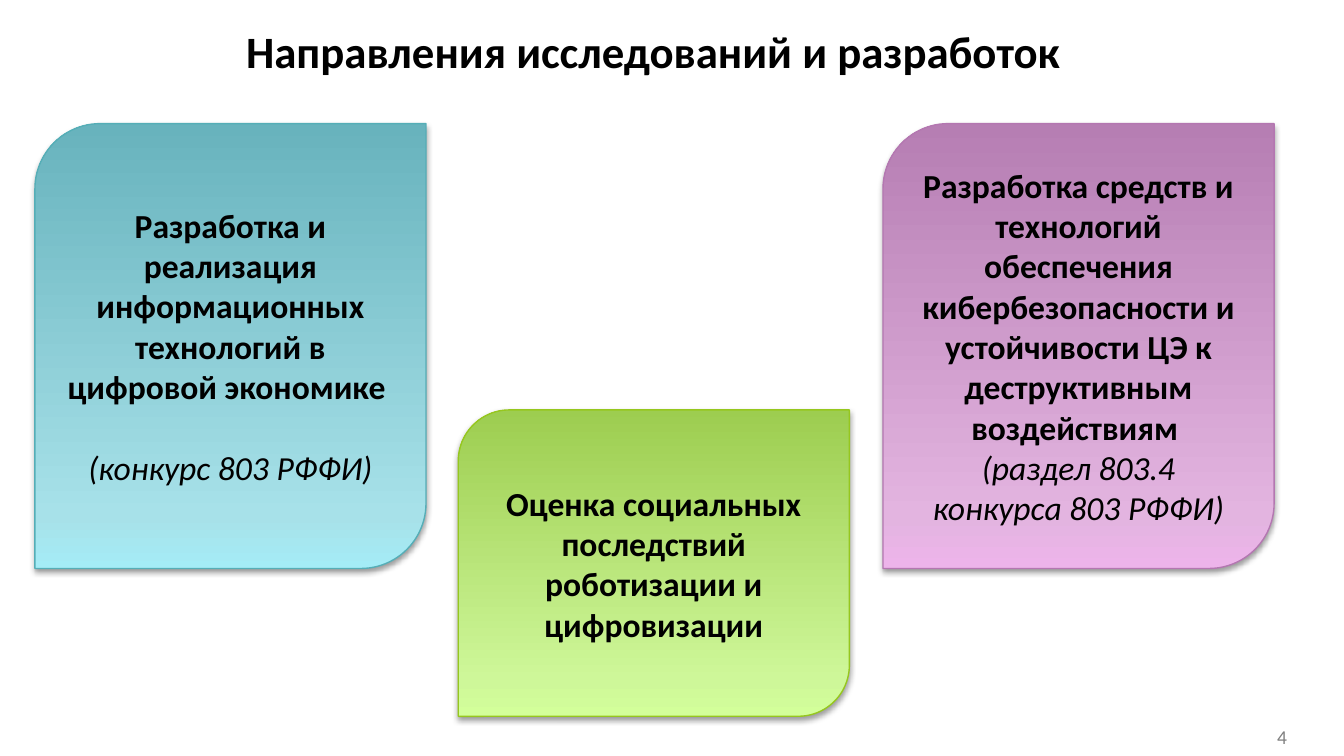
from copy import deepcopy
from dataclasses import dataclass

from lxml import etree
from pptx import Presentation
from pptx.dml.color import RGBColor
from pptx.enum.shapes import MSO_SHAPE
from pptx.enum.text import MSO_ANCHOR, PP_ALIGN
from pptx.oxml.ns import qn
from pptx.util import Inches, Pt

CENTER = PP_ALIGN.CENTER
MIDDLE = MSO_ANCHOR.MIDDLE
LEAF = MSO_SHAPE.ROUND_2_DIAG_RECTANGLE


@dataclass(frozen=True)
class Theme:
    font: str = "Calibri"
    text: str = "000000"
    muted: str = "808080"
    title_size: float = 24
    body_size: float = 18
    number_size: float = 10.5
    # Each palette: outline, then gradient colours from bottom to top
    teal: tuple = ("55AEB7", "A4ECF6", "A7E1E9", "68B3BD")
    green: tuple = ("96C71E", "D3FF9A", "CEF799", "9DCD50")
    purple: tuple = ("B477B1", "EDB4EA", "E3B4E0", "B67EB3")
    stops: tuple = (0, 0.12, 1)


class SlideBuilder:
    def __init__(self, slide, theme):
        self.slide = slide
        self.theme = theme

    def style(self, para, size, color, bold=False, italic=False):
        para.alignment = CENTER
        for span in para.runs:
            font = span.font
            font.name, font.size = self.theme.font, Pt(size)
            font.bold, font.italic = bold, italic
            font.color.rgb = RGBColor.from_string(color)

    def label(self, text, left, top, width, height, size, color, bold=False):
        box = self.slide.shapes.add_textbox(
            Inches(left), Inches(top), Inches(width), Inches(height))
        frame = box.text_frame
        frame.word_wrap = True
        frame.vertical_anchor = MIDDLE
        frame.margin_left = frame.margin_right = 0
        frame.margin_top = frame.margin_bottom = 0
        frame.text = text
        self.style(frame.paragraphs[0], size, color, bold)

    def gradient(self, card, colors):
        """Fill the card from bottom to top with three colours."""
        fill = card.fill
        fill.gradient()
        fill.gradient_angle = 90
        stop_list = next(card._element.spPr.iter(qn("a:gsLst")))
        stop_list.append(deepcopy(stop_list[0]))
        for stop, position, color in zip(fill.gradient_stops, self.theme.stops, colors):
            stop.position = position
            stop.color.rgb = RGBColor.from_string(color)

    def drop_shadow(self, card):
        card.shadow.inherit = False
        effects = card._element.spPr.find(qn("a:effectLst"))
        shadow = etree.SubElement(
            effects, qn("a:outerShdw"), blurRad=str(Pt(3.1)), dist=str(Pt(1.6)),
            dir="5400000", rotWithShape="0")
        color = etree.SubElement(shadow, qn("a:srgbClr"), val=self.theme.text)
        etree.SubElement(color, qn("a:alpha"), val="38000")

    def card(self, left, top, width, height, palette, topic, note=None, note_gap=0):
        card = self.slide.shapes.add_shape(
            LEAF, Inches(left), Inches(top), Inches(width), Inches(height))
        outline, *colors = palette
        self.gradient(card, colors)
        card.line.color.rgb = RGBColor.from_string(outline)
        card.line.width = Pt(0.75)
        self.drop_shadow(card)

        theme = self.theme
        frame = card.text_frame
        frame.word_wrap = True
        frame.vertical_anchor = MIDDLE
        frame.text = topic
        self.style(frame.paragraphs[0], theme.body_size, theme.text, bold=True)
        if note:
            para = frame.add_paragraph()
            para.text = note
            para.space_before = Pt(note_gap)
            self.style(para, theme.body_size, theme.text, italic=True)


def main():
    deck = Presentation()
    deck.slide_width = Inches(10)
    deck.slide_height = deck.slide_width * 9 // 16
    theme = Theme()
    page = SlideBuilder(deck.slides.add_slide(deck.slide_layouts[6]), theme)

    page.label("4", 9.25, 5.42, 0.58, 0.12, theme.number_size, theme.muted)
    page.label("Направления исследований и разработок", 0, 0.14, 9.72, 0.47,
               theme.title_size, theme.text, bold=True)

    card_width = 2.91
    cards = [
        (0.26, 0.92, 3.31, theme.teal,
         "Разработка и реализация информационных технологий в цифровой экономике ",
         "(конкурс 803 РФФИ)", 22),
        (3.41, 3.05, 2.28, theme.green,
         "Оценка социальных последствий роботизации и цифровизации"),
        (6.57, 0.92, 3.31, theme.purple,
         "Разработка средств и технологий обеспечения кибербезопасности "
         "и устойчивости ЦЭ к деструктивным воздействиям ",
         "(раздел 803.4 конкурса 803 РФФИ)"),
    ]
    for left, top, height, *content in cards:
        page.card(left, top, card_width, height, *content)

    deck.save("out.pptx")


if __name__ == "__main__":
    main()
